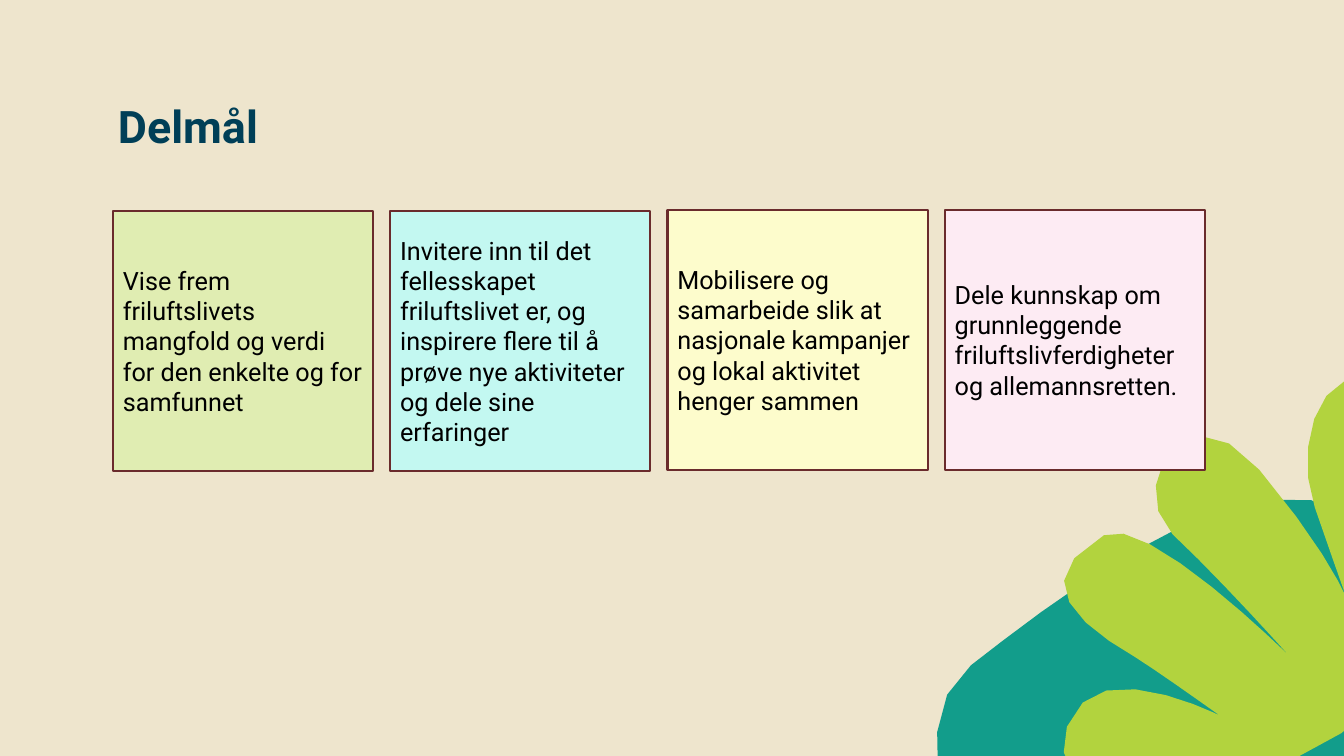
import math

import pptx
import pptx.dml.color
import pptx.enum.shapes
import pptx.enum.text
import pptx.util

Inches = pptx.util.Inches
Pt = pptx.util.Pt

FONT = "Roboto"
COLORS = {
    "sand": "EEE5CD", "stone": "129D8B", "leaf": "B2D33E",
    "heading": "003F57", "border": "6A2B2C", "body": "000000",
    "green": "E0EDB2", "cyan": "C3F8F1", "yellow": "FDFCCC", "pink": "FDEBF3",
}
# Fill, rise above the row's top in inches, wording
GOALS = [
    ("green", 0, "Vise frem friluftslivets mangfold og verdi for den enkelte og for samfunnet"),
    ("cyan", 0, "Invitere inn til det fellesskapet friluftslivet er, og inspirere flere til å "
                "prøve nye aktiviteter og dele sine erfaringer"),
    ("yellow", 0.01, "Mobilisere og samarbeide slik at nasjonale kampanjer og lokal aktivitet "
                     "henger sammen"),
    ("pink", 0.01, "Dele kunnskap om grunnleggende friluftslivferdigheter og allemannsretten."),
]

# Outlines in inches from the corner of the decoration: a start point,
# then two control points and an end point for each curve
STONE = [
    (0.98, 6.55),
    (0.98, 6.55), (-0.31, 4.32), (0.63, 3.6),
    (1.57, 2.87), (3.78, 1.13), (4.68, 2.39),
    (5.58, 3.66), (5.94, 6.32), (5.3, 7.08),
    (4.67, 7.84), (1.96, 8.08), (0.98, 6.55),
]
LEAF = [
    (4.92, 3.55),
    (4.98, 3.4), (5.86, 1.54), (4.85, 0.87),
    (4.13, 0.4), (3.81, 1.39), (4.04, 2.03),
    (4.26, 2.67), (4.37, 2.97), (4.37, 2.97),
    (4.37, 2.97), (4.21, 2.52), (3.49, 1.66),
    (2.77, 0.8), (2.15, 1.83), (2.63, 2.3),
    (3.12, 2.76), (3.79, 3.51), (3.79, 3.51),
    (3.79, 3.51), (2.35, 2.08), (1.95, 2.31),
    (1.14, 2.77), (1.74, 3.22), (2.26, 3.52),
    (2.5, 3.67), (3.1, 4.1), (3.1, 4.1),
    (3.1, 4.1), (2.12, 3.6), (1.74, 3.97),
    (1.37, 4.34), (1.54, 4.92), (2.19, 4.9),
    (2.77, 4.88), (4.52, 4.6), (4.92, 3.55),
]


def color(name):
    return pptx.dml.color.RGBColor.from_string(COLORS[name])


def style_run(run, size, color_name, bold=False):
    run.font.name = FONT
    run.font.size = Pt(size)
    run.font.bold = bold
    run.font.color.rgb = color(color_name)


def curve_points(outline, tolerance=0.03):
    """Points along a chain of cubic curves, fewer where a curve is flat."""
    for i in range(0, len(outline) - 1, 3):
        curve = outline[i:i + 4]
        bend = max(math.hypot(*(a - 2 * b + c for a, b, c in zip(*curve[k:k + 3])))
                   for k in (0, 1))
        steps = math.ceil(math.sqrt(0.75 * bend / tolerance))
        for step in range(1, steps + 1):
            t = step / steps
            weights = ((1 - t) ** 3, 3 * t * (1 - t) ** 2, 3 * t * t * (1 - t), t ** 3)
            yield tuple(sum(w * point[axis] for w, point in zip(weights, curve))
                        for axis in (0, 1))


def add_decoration(slide, left, top):
    for outline, fill in ((STONE, "stone"), (LEAF, "leaf")):
        points = [(Inches(left + x), Inches(top + y)) for x, y in curve_points(outline)]
        builder = slide.shapes.build_freeform(*points[-1])
        builder.add_line_segments(points[:-1], close=True)
        plant_part = builder.convert_to_shape()
        plant_part.shadow.inherit = False
        plant_part.fill.solid()
        plant_part.fill.fore_color.rgb = color(fill)
        plant_part.line.fill.background()


def add_heading(slide, left, top, width, height):
    heading = slide.shapes.title
    heading.left, heading.top = Inches(left), Inches(top)
    heading.width, heading.height = Inches(width), Inches(height)
    heading.text_frame.text = "Delmål"
    heading.text_frame.vertical_anchor = pptx.enum.text.MSO_ANCHOR.BOTTOM
    paragraph = heading.text_frame.paragraphs[0]
    paragraph.alignment = pptx.enum.text.PP_ALIGN.LEFT
    style_run(paragraph.runs[0], 32, "heading", bold=True)


def add_goals(slide, left, top, width, side):
    pitch = (width - side) / (len(GOALS) - 1)
    # The rightmost goal lies at the back
    for i, (fill, rise, wording) in reversed(list(enumerate(GOALS))):
        goal = slide.shapes.add_shape(
            pptx.enum.shapes.MSO_SHAPE.RECTANGLE,
            Inches(left + i * pitch), Inches(top - rise), Inches(side), Inches(side))
        goal.shadow.inherit = False
        goal.fill.solid()
        goal.fill.fore_color.rgb = color(fill)
        goal.line.color.rgb = color("border")
        goal.line.width = Pt(1.5)
        goal.text_frame.text = wording
        goal.text_frame.word_wrap = True
        goal.text_frame.vertical_anchor = pptx.enum.text.MSO_ANCHOR.MIDDLE
        paragraph = goal.text_frame.paragraphs[0]
        paragraph.alignment = pptx.enum.text.PP_ALIGN.LEFT
        style_run(paragraph.runs[0], 18, "body")


def main():
    deck = pptx.Presentation()
    deck.slide_width, deck.slide_height = Inches(13.33), Inches(7.5)
    slide = deck.slides.add_slide(deck.slide_layouts[5])
    slide.background.fill.solid()
    slide.background.fill.fore_color.rgb = color("sand")

    add_decoration(slide, 9, 3)
    add_heading(slide, 1.07, 0.28, 11.54, 1.28)
    add_goals(slide, 1.12, 2.09, 10.83, 2.58)
    deck.save("out.pptx")


if __name__ == "__main__":
    main()
